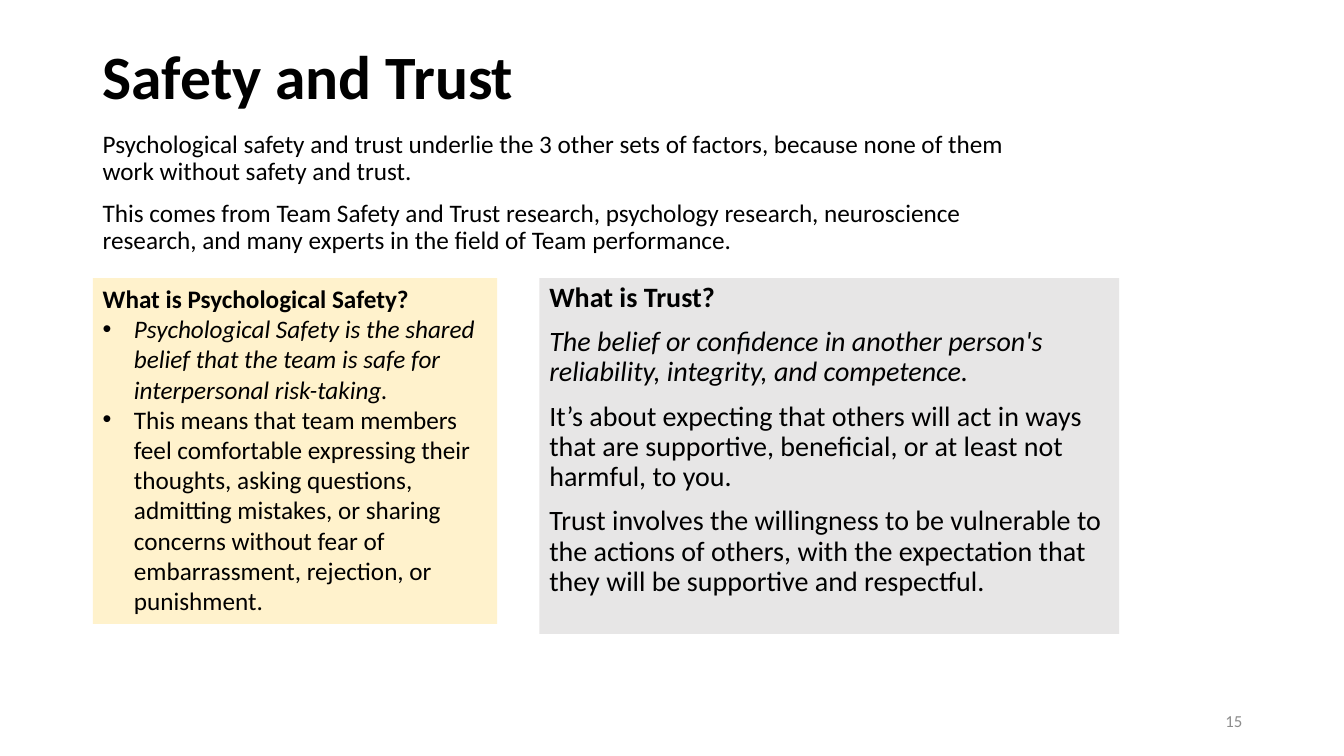
from lxml import etree
from pptx import Presentation
from pptx.dml.color import RGBColor
from pptx.enum.shapes import MSO_SHAPE
from pptx.enum.text import MSO_ANCHOR, PP_ALIGN
from pptx.oxml.ns import qn
from pptx.util import Inches, Pt

RECTANGLE = MSO_SHAPE.RECTANGLE
TOP, MIDDLE = MSO_ANCHOR.TOP, MSO_ANCHOR.MIDDLE
LEFT, RIGHT = PP_ALIGN.LEFT, PP_ALIGN.RIGHT

FONT = "Calibri"
COLORS = {"text": "000000", "number": "8C8C8C", "safety": "FFF2CC", "trust": "E7E6E6"}
MARGIN = 0.92
PANEL_TOP = 2.76
BULLET_INDENT = 0.31


class SlideBuilder:
    def __init__(self, presentation):
        self.slide = presentation.slides.add_slide(presentation.slide_layouts[5])

    def fill_text(self, shape, paragraphs, size, color="text", anchor=TOP,
                  alignment=LEFT, line_spacing=1.0, space_before=0):
        text_frame = shape.text_frame
        text_frame.word_wrap = True
        text_frame.vertical_anchor = anchor
        for index, (text, style) in enumerate(paragraphs):
            paragraph = text_frame.paragraphs[0] if index == 0 else text_frame.add_paragraph()
            paragraph.text = text
            paragraph.alignment = alignment
            paragraph.line_spacing = line_spacing
            paragraph.space_before = Pt(space_before if index else 0)
            if "bullet" in style:
                self.add_bullet(paragraph)
            font = paragraph.runs[0].font
            font.name = FONT
            font.size = Pt(size)
            font.bold = "bold" in style
            font.italic = "italic" in style
            font.color.rgb = RGBColor.from_string(COLORS[color])

    def add_bullet(self, paragraph):
        properties = paragraph._p.get_or_add_pPr()
        properties.set("marL", str(Inches(BULLET_INDENT)))
        properties.set("indent", str(-Inches(BULLET_INDENT)))
        etree.SubElement(properties, qn("a:buFont")).set("typeface", "Arial")
        etree.SubElement(properties, qn("a:buChar")).set("char", "•")

    def title(self, text, left, top, width, height):
        shape = self.slide.shapes.title
        shape.left, shape.top = Inches(left), Inches(top)
        shape.width, shape.height = Inches(width), Inches(height)
        self.fill_text(shape, [(text, "bold")], 44, anchor=MIDDLE, line_spacing=0.9)

    def text(self, paragraphs, left, top, width, height, size, **options):
        shape = self.slide.shapes.add_textbox(
            Inches(left), Inches(top), Inches(width), Inches(height))
        self.fill_text(shape, paragraphs, size, **options)

    def panel(self, paragraphs, left, width, height, fill, size, **options):
        shape = self.slide.shapes.add_shape(
            RECTANGLE, Inches(left), Inches(PANEL_TOP), Inches(width), Inches(height))
        shape.shadow.inherit = False
        shape.fill.solid()
        shape.fill.fore_color.rgb = RGBColor.from_string(COLORS[fill])
        shape.line.fill.background()
        self.fill_text(shape, paragraphs, size, **options)


def main():
    presentation = Presentation()
    presentation.slide_width = Inches(13.33)
    presentation.slide_height = Inches(7.5)
    builder = SlideBuilder(presentation)
    spaced = {"line_spacing": 0.9, "space_before": 10}

    builder.title("Safety and Trust", MARGIN, 0.4, 11.5, 0.78)
    builder.text([
        ("Psychological safety and trust underlie the 3 other sets of factors, "
         "because none of them work without safety and trust.", ""),
        ("This comes from Team Safety and Trust research, psychology research, "
         "neuroscience research, and many experts in the field of Team performance.", ""),
    ], MARGIN, 1.26, 9.59, 1.5, 18, **spaced)
    builder.panel([
        ("What is Psychological Safety?", "bold"),
        ("Psychological Safety is the shared belief that the team is safe for "
         "interpersonal risk-taking.", "bullet italic"),
        ("This means that team members feel comfortable expressing their thoughts, "
         "asking questions, admitting mistakes, or sharing concerns without fear of "
         "embarrassment, rejection, or punishment.", "bullet"),
    ], MARGIN, 4.01, 3.43, "safety", 18)
    builder.panel([
        ("What is Trust?", "bold"),
        ("The belief or confidence in another person's reliability, integrity, "
         "and competence.", "italic"),
        ("It’s about expecting that others will act in ways that are supportive, "
         "beneficial, or at least not harmful, to you.", ""),
        ("Trust involves the willingness to be vulnerable to the actions of others, "
         "with the expectation that they will be supportive and respectful.", ""),
    ], 5.35, 5.75, 3.53, "trust", 20, **spaced)
    builder.text([("15", "")], 9.42, 6.95, 3, 0.4, 12,
                 color="number", anchor=MIDDLE, alignment=RIGHT)
    presentation.save("out.pptx")


if __name__ == "__main__":
    main()
